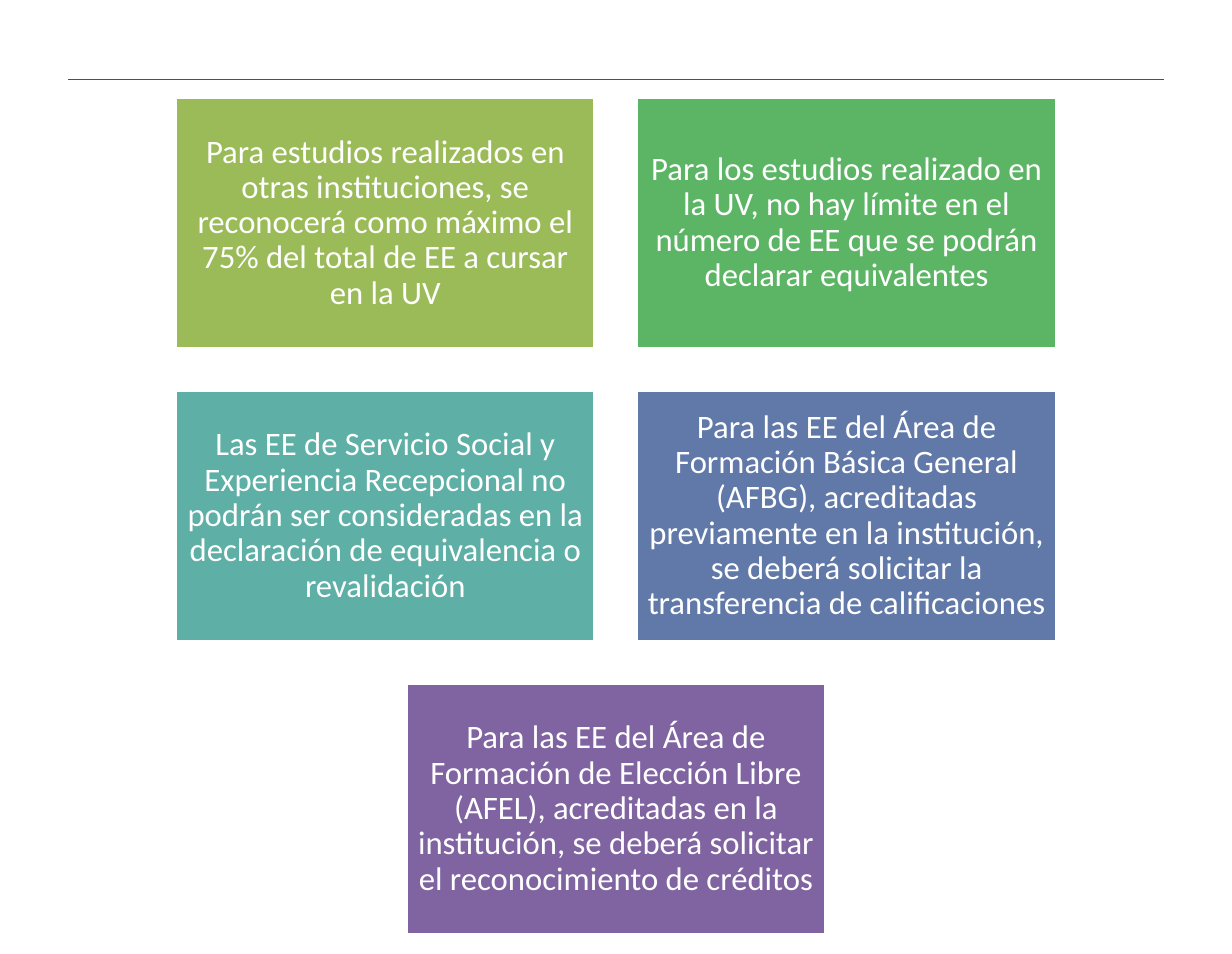
from dataclasses import dataclass

from lxml import etree
from pptx import Presentation
from pptx.dml.color import RGBColor as RGB
from pptx.enum.shapes import MSO_CONNECTOR as Link, MSO_SHAPE as Shape
from pptx.enum.text import MSO_ANCHOR as Anchor, PP_ALIGN as Align
from pptx.oxml.ns import qn
from pptx.util import Cm, Pt


@dataclass(frozen=True)
class Theme:
    font: str = "Calibri"
    size: float = 21
    white: RGB = RGB(0xFF, 0xFF, 0xFF)
    rule: RGB = RGB(0x36, 0x4F, 0x9D)
    edge: float = 2
    thin: float = 0.75


THEME = Theme()
WIDE, HIGH = 27.91, 21.62
COLS = 2
GAP = 0.95
CARDS = [
    ("9BBB59", "Para estudios realizados en otras instituciones, se reconocerá "
               "como máximo el 75% del total de EE a cursar en la UV"),
    ("5CB565", "Para los estudios realizado en la UV, no hay límite en el "
               "número de EE que se podrán declarar equivalentes"),
    ("5EAFA6", "Las EE de Servicio Social y Experiencia Recepcional no podrán "
               "ser consideradas en la declaración de equivalencia o revalidación"),
    ("6179A8", "Para las EE del Área de Formación Básica General (AFBG), "
               "acreditadas previamente en la institución, se deberá solicitar "
               "la transferencia de calificaciones"),
    ("8064A2", "Para las EE del Área de Formación de Elección Libre (AFEL), "
               "acreditadas en la institución, se deberá solicitar el "
               "reconocimiento de créditos"),
]


def add_rule(slide, left, top, width):
    line = slide.shapes.add_connector(
        Link.STRAIGHT, Cm(left), Cm(top), Cm(left + width), Cm(top))
    line.line.color.rgb = THEME.rule
    line.line.width = Pt(THEME.thin)
    etree.SubElement(line._element.spPr, qn("a:effectLst"))


def add_card(slide, left, top, width, height, color, text):
    card = slide.shapes.add_shape(
        Shape.RECTANGLE, Cm(left), Cm(top), Cm(width), Cm(height))
    card.shadow.inherit = False
    card.fill.solid()
    card.fill.fore_color.rgb = RGB.from_string(color)
    card.line.color.rgb = THEME.white
    card.line.width = Pt(THEME.edge)

    frame = card.text_frame
    frame.word_wrap = True
    frame.vertical_anchor = Anchor.MIDDLE
    frame.margin_left = frame.margin_right = Cm(0.23)
    frame.margin_top = frame.margin_bottom = Cm(0.23)
    frame.text = text
    para = frame.paragraphs[0]
    para.alignment = Align.CENTER
    para.line_spacing = 0.9
    font = para.runs[0].font
    font.name = THEME.font
    font.size = Pt(THEME.size)
    font.color.rgb = THEME.white


def add_grid(slide, left, top, width, height):
    """Fill the box with rows of cards, centring a row that is not full."""
    rows = -(-len(CARDS) // COLS)
    wide = (width - GAP * (COLS - 1)) / COLS
    high = (height - GAP * (rows - 1)) / rows
    for row in range(rows):
        group = CARDS[row * COLS:(row + 1) * COLS]
        shift = (COLS - len(group)) * (wide + GAP) / 2
        for col, (color, text) in enumerate(group):
            add_card(slide, left + shift + col * (wide + GAP),
                     top + row * (high + GAP), wide, high, color, text)


def main():
    deck = Presentation()
    deck.slide_width, deck.slide_height = Cm(WIDE), Cm(HIGH)
    slide = deck.slides.add_slide(deck.slide_layouts[6])
    add_rule(slide, 1.55, 1.8, 24.82)
    add_grid(slide, 3.98, 2.21, 19.95, 18.97)
    deck.save("out.pptx")


if __name__ == "__main__":
    main()
